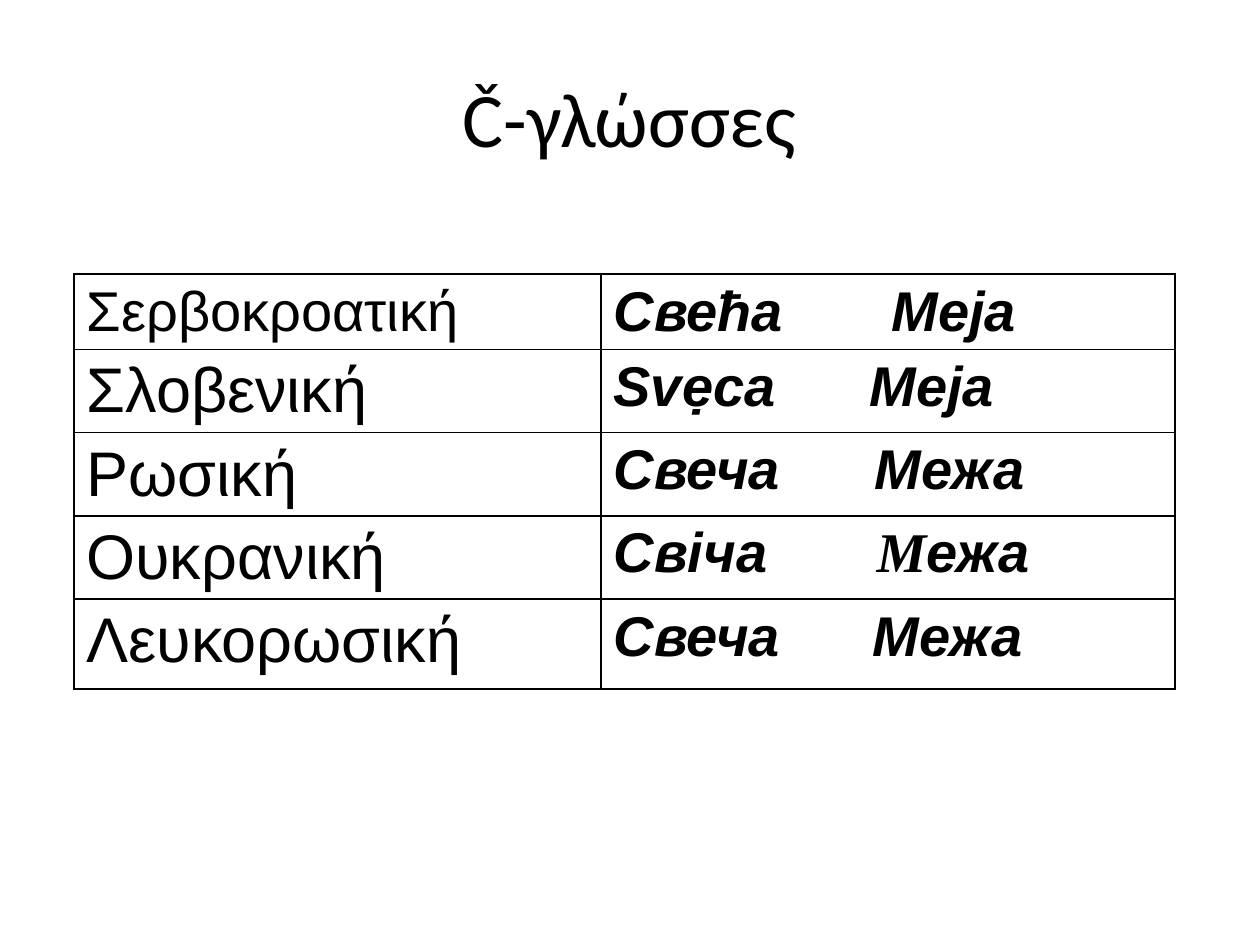
from dataclasses import dataclass

from lxml.etree import SubElement
from pptx import Presentation
from pptx.dml.color import RGBColor
from pptx.enum.text import MSO_ANCHOR, PP_ALIGN
from pptx.oxml import parse_xml
from pptx.oxml.ns import nsdecls, qn
from pptx.util import Pt

SCALE = 914400 / 126


@dataclass(frozen=True)
class Theme:
    ink: str = "000000"
    title_font: str = "Calibri"
    body_font: str = "Arial"
    accent_font: str = "Times New Roman"
    title_size: int = 44
    large_size: int = 36
    body_size: int = 32
    border: int = 1


THEME = Theme()

ROWS = [
    ("Σερβοκροατική", THEME.body_size, "Свеħа", [("Меjа", THEME.body_font)], 278),
    ("Σλοβενική", THEME.large_size, "Svẹca", [("Meja", THEME.body_font)], 256),
    ("Ρωσική", THEME.large_size, "Свеча", [("Межа", THEME.body_font)], 261),
    ("Ουκρανική", THEME.large_size, "Свiча",
     [("М", THEME.accent_font), ("ежа", THEME.body_font)], 263),
    ("Λευκορωσική", THEME.large_size, "Свеча", [("Межа", THEME.body_font)], 259),
]


def px(n):
    return round(n * SCALE)


def add_run(p, text, font, size, emphasis=False):
    r = p.add_run()
    r.text = text
    r.font.name = font
    r.font.size = Pt(size)
    r.font.bold = r.font.italic = emphasis
    r.font.color.rgb = RGBColor.from_string(THEME.ink)


def set_tab(p, pos):
    tabs = SubElement(p._p.get_or_add_pPr(), qn("a:tabLst"))
    SubElement(tabs, qn("a:tab"), pos=str(px(pos)), algn="l")


def style_cell(cell):
    cell.fill.background()
    tc_pr = cell._tc.get_or_add_tcPr()
    for i, side in enumerate(("lnL", "lnR", "lnT", "lnB")):
        tc_pr.insert(i, parse_xml(
            f'<a:{side} {nsdecls("a")} w="{Pt(THEME.border)}"><a:solidFill>'
            f'<a:srgbClr val="{THEME.ink}"/></a:solidFill></a:{side}>'))


def place_title(s, x, y, w, h):
    sp = s.shapes.title
    sp.left, sp.top, sp.width, sp.height = map(px, (x, y, w, h))
    tf = sp.text_frame
    tf.vertical_anchor = MSO_ANCHOR.MIDDLE
    p = tf.paragraphs[0]
    p.alignment = PP_ALIGN.CENTER
    add_run(p, "Č-γλώσσες", THEME.title_font, THEME.title_size)


def place_word_table(s, x, y, w, h):
    frame = s.shapes.add_table(len(ROWS), 2, *map(px, (x, y, w, h)))
    table = frame.table
    table.first_row = table.horz_banding = False
    name_width = 527
    table.columns[0].width = px(name_width)
    table.columns[1].width = px(w - name_width)
    for i, (language, size, candle, border_word, tab) in enumerate(ROWS):
        table.rows[i].height = px(90 if i == len(ROWS) - 1 else 63)
        name, words = table.cell(i, 0), table.cell(i, 1)
        style_cell(name)
        style_cell(words)
        add_run(name.text_frame.paragraphs[0], language, THEME.body_font, size)
        p = words.text_frame.paragraphs[0]
        set_tab(p, tab)
        add_run(p, candle + "\t", THEME.body_font, THEME.body_size, True)
        for text, font in border_word:
            add_run(p, text, font, THEME.body_size, True)
    frame.height = px(h)


def main():
    prs = Presentation()
    prs.slide_width, prs.slide_height = px(1260), px(945)
    s = prs.slides.add_slide(prs.slide_layouts[5])
    place_title(s, 63, 38, 1134, 157)
    place_word_table(s, 74, 274, 1101, 435)
    prs.save("out.pptx")


if __name__ == "__main__":
    main()
